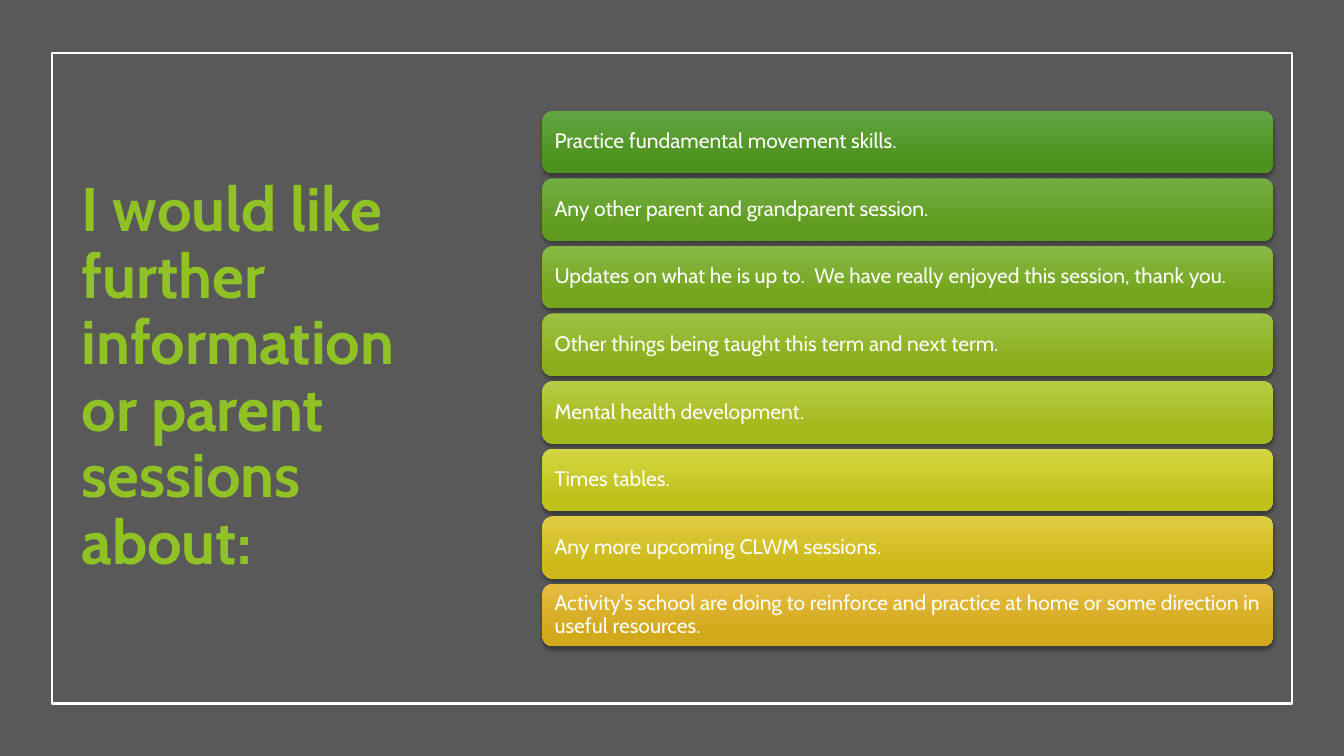
"""Build the slide listing requests for further parent sessions."""
from lxml import etree
from pptx import Presentation
from pptx.dml.color import RGBColor
from pptx.enum import shapes, text
from pptx.oxml import ns
from pptx.util import Inches, Pt

TITLE = "I would like further information or parent sessions about:"
ITEMS = [
    ("Practice fundamental movement skills.", "63A545", "4D921E"),
    ("Any other parent and grandparent session.", "74AE44", "5F9C1E"),
    ("Updates on what he is up to.  We have really enjoyed this session, thank you.",
     "87B844", "74A51D"),
    ("Other things being taught this term and next term.", "9DC244", "8BAE1D"),
    ("Mental health development.", "B7CC44", "A4B81C"),
    ("Times tables.", "D4D643", "C0C21B"),
    ("Any more upcoming CLWM sessions.", "E0CC43", "CCB919"),
    ("Activity's school are doing to reinforce and practice at home or some "
     "direction in useful resources.", "E7BC43", "D2A91B"),
]
FONT = "Cabin"
GREY = RGBColor(0x59, 0x59, 0x59)
WHITE = RGBColor(0xFF, 0xFF, 0xFF)
GREEN = RGBColor(0x90, 0xC2, 0x26)
LEFT, TOP, WIDTH, HEIGHT, STEP = 5.38, 1.1, 7.25, 0.62, 0.67
KIND = shapes.MSO_SHAPE


def add_box(slide, kind, *place):
    box = slide.shapes.add_shape(kind, *map(Inches, place))
    box.shadow.inherit = False
    box.line.fill.background()
    return box


def add_panel(slide, *place):
    panel = add_box(slide, KIND.RECTANGLE, *place)
    panel.fill.solid()
    panel.fill.fore_color.rgb = GREY
    return panel


def set_text(box, words, size, color, bold=False):
    frame = box.text_frame
    frame.text = words
    frame.word_wrap = True
    frame.vertical_anchor = text.MSO_ANCHOR.MIDDLE
    para = frame.paragraphs[0]
    para.alignment = text.PP_ALIGN.LEFT
    para.line_spacing = 0.9
    font = para.runs[0].font
    font.name, font.size, font.bold = FONT, Pt(size), bold
    font.color.rgb = color
    return frame


def add_shade(box):
    effects = box.element.spPr.find(ns.qn("a:effectLst"))
    shade = etree.SubElement(effects, ns.qn("a:outerShdw"), blurRad=str(Pt(3)),
                             dist=str(Pt(2)), dir="5400000", rotWithShape="0")
    color = etree.SubElement(shade, ns.qn("a:srgbClr"), val="000000")
    etree.SubElement(color, ns.qn("a:alpha"), val="35000")


def add_bar(slide, row, words, light, dark):
    bar = add_box(slide, KIND.ROUNDED_RECTANGLE, LEFT, TOP + row * STEP, WIDTH, HEIGHT)
    bar.fill.gradient()
    bar.fill.gradient_angle = 270
    for stop, spot, tone in zip(bar.fill.gradient_stops, (0, 0.78), (light, dark)):
        stop.position = spot
        stop.color.rgb = RGBColor.from_string(tone)
    add_shade(bar)
    frame = set_text(bar, words, 15, WHITE)
    frame.margin_left = frame.margin_right = Inches(0.09)
    frame.margin_top = frame.margin_bottom = Inches(0.09)


def main():
    deck = Presentation()
    deck.slide_width, deck.slide_height = Inches(13.33), Inches(7.5)
    slide = deck.slides.add_slide(deck.slide_layouts[6])
    add_panel(slide, 0, 0, 13.33, 7.5)
    border = add_panel(slide, 0.52, 0.53, 12.29, 6.45)
    border.line.color.rgb = WHITE
    border.line.width = Pt(1.5)
    title = slide.shapes.add_textbox(*map(Inches, (0.71, 1.51, 3.88, 4.48)))
    set_text(title, TITLE, 44, GREEN, True)
    for row, item in enumerate(ITEMS):
        add_bar(slide, row, *item)
    deck.save("out.pptx")


if __name__ == "__main__":
    main()
